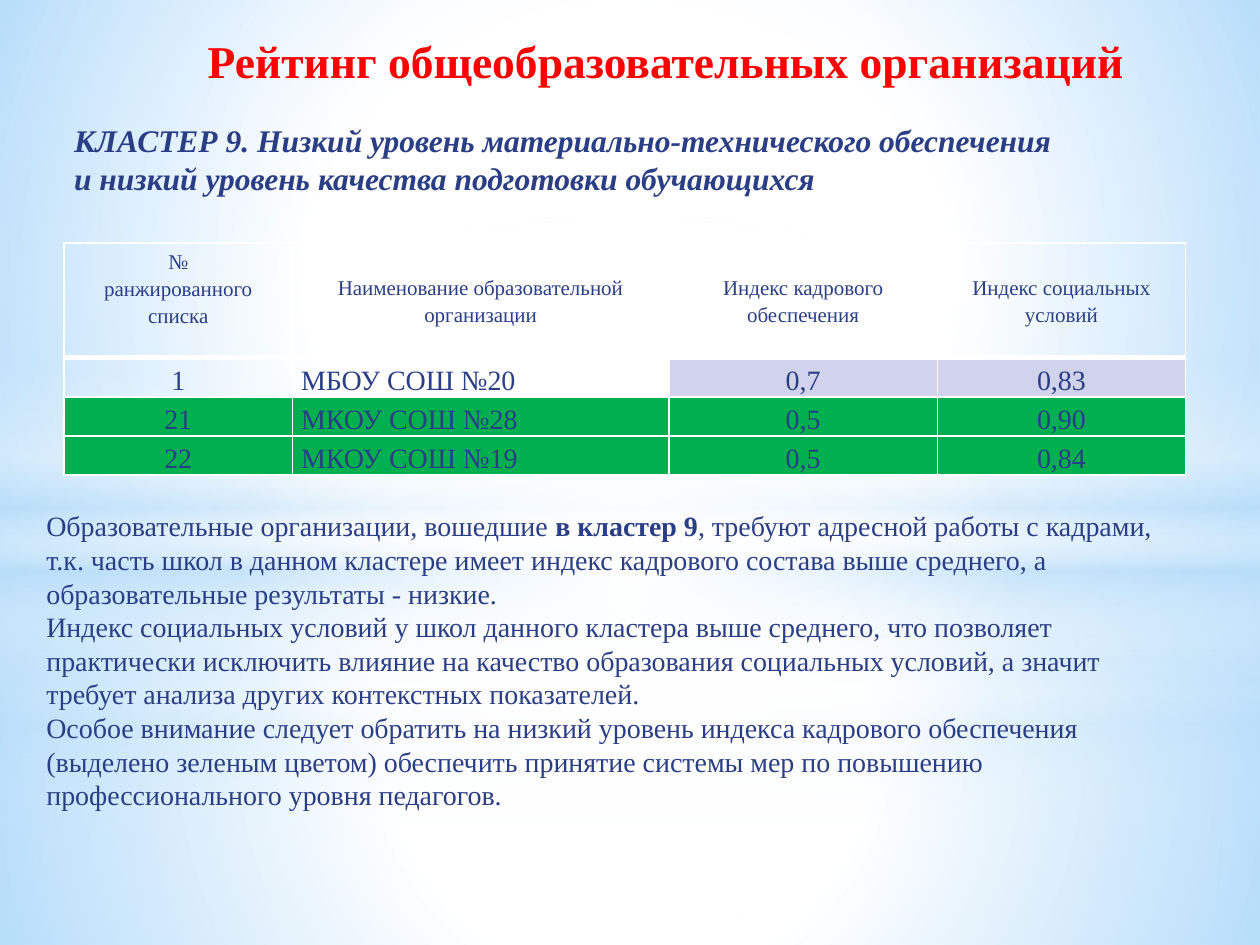
from lxml import etree
from pptx import Presentation
from pptx.dml.color import RGBColor
from pptx.enum.shapes import MSO_SHAPE
from pptx.enum.text import MSO_ANCHOR, PP_ALIGN
from pptx.oxml.ns import qn
from pptx.util import Inches, Pt

RECT, OVAL = MSO_SHAPE.RECTANGLE, MSO_SHAPE.OVAL
TOP, MIDDLE, BOTTOM = MSO_ANCHOR.TOP, MSO_ANCHOR.MIDDLE, MSO_ANCHOR.BOTTOM
LEFT, CENTER = PP_ALIGN.LEFT, PP_ALIGN.CENTER
FONT = "Times New Roman"
COLORS = {
    "white": "FFFFFF",
    "sky": "B4DCFA",
    "red": "FF0000",
    "navy": "2A3E86",
    "lilac": "D0D3EB",
    "green": "00B050",
}
BAND = [(0, "white", 0), (29, "white", 30), (45, "sky", 40),
        (55, "white", 26), (65, "sky", 60), (100, "white", 0)]
HEADERS = [
    ["№", "ранжированного", "списка"],
    ["Наименование образовательной организации"],
    ["Индекс кадрового обеспечения"],
    ["Индекс социальных условий"],
]
SCHOOLS = [
    (["1", "МБОУ СОШ №20", "0,7", "0,83"], [None, None, "lilac", "lilac"]),
    (["21", "МКОУ СОШ №28", "0,5", "0,90"], ["green"] * 4),
    (["22", "МКОУ СОШ №19", "0,5", "0,84"], ["green"] * 4),
]
CONCLUSIONS = [
    [("Образовательные организации, вошедшие ", False),
     ("в кластер 9", True),
     (", требуют адресной работы с кадрами, т.к. часть школ в данном кластере "
      "имеет индекс кадрового состава выше среднего, а образовательные "
      "результаты - низкие.", False)],
    [("Индекс социальных условий у школ данного кластера выше среднего, что "
      "позволяет практически исключить влияние на качество образования "
      "социальных условий, а значит требует анализа других контекстных "
      "показателей.", False)],
    [("Особое внимание следует обратить на низкий уровень индекса кадрового "
      "обеспечения (выделено зеленым цветом) обеспечить принятие системы мер "
      "по повышению профессионального уровня педагогов.", False)],
]


def rgb(name):
    """Return the named colour."""
    return RGBColor.from_string(COLORS[name])


def add_glow(page, kind, top, height, stops, radial=True):
    """Add a full-width shape with a translucent gradient of (place, colour, opacity)."""
    shape = page.shapes.add_shape(kind, 0, Inches(top), Inches(10), Inches(height))
    shape.shadow.inherit = False
    shape.line.fill.background()
    shape.fill.background()
    empty = shape._element.spPr.find(qn("a:noFill"))
    gradient = etree.Element(qn("a:gradFill"), rotWithShape="1")
    stop_list = etree.SubElement(gradient, qn("a:gsLst"))
    for place, color, opacity in stops:
        stop = etree.SubElement(stop_list, qn("a:gs"), pos=str(place * 1000))
        tint = etree.SubElement(stop, qn("a:srgbClr"), val=COLORS[color])
        etree.SubElement(tint, qn("a:alpha"), val=str(opacity * 1000))
    if radial:
        route = etree.SubElement(gradient, qn("a:path"), path="circle")
        etree.SubElement(route, qn("a:fillToRect"), l="50000", t="50000",
                         r="50000", b="50000")
    else:
        etree.SubElement(gradient, qn("a:lin"), ang="5400000", scaled="0")
    empty.getparent().replace(empty, gradient)


def add_backdrop(page, split, band_top, opacity, fade):
    """Add one set of sky glows that meet at the split height."""
    add_glow(page, RECT, split, 7.5 - split,
             [(0, "white", opacity + 2), (37, "white", opacity - 13),
              (100, "sky", opacity - 10)])
    add_glow(page, RECT, 0, split,
             [(0, "white", opacity), (48, "white", opacity - 27),
              (100, "sky", opacity - 10)])
    add_glow(page, RECT, band_top, 2.5, BAND, radial=False)
    add_glow(page, OVAL, 1.75, 5.58, [(0, "white", 100), (fade, "white", 0)])


def add_span(para, text, size, color="navy", bold=False, italic=False):
    """Add one formatted run."""
    span = para.add_run()
    span.text = text
    font = span.font
    font.name, font.size = FONT, Pt(size)
    font.bold, font.italic = bold, italic
    font.color.rgb = rgb(color)


def add_text(page, place, paragraphs, size, anchor=TOP, wrap=True, indent=0, **style):
    """Add a text box from paragraphs of (text, bold) pairs."""
    box = page.shapes.add_textbox(*[Inches(value) for value in place])
    frame = box.text_frame
    frame.word_wrap, frame.vertical_anchor = wrap, anchor
    for index, spans in enumerate(paragraphs):
        para = frame.paragraphs[0] if index == 0 else frame.add_paragraph()
        if indent:
            props = para._p.get_or_add_pPr()
            props.set("marL", "0")
            props.set("indent", str(Inches(indent)))
        for text, bold in spans:
            add_span(para, text, size, bold=bold, **style)


def set_borders(cell, top, bottom):
    """Draw white borders around a cell."""
    props = cell._tc.get_or_add_tcPr()
    for side, width in (("L", 1), ("R", 1), ("T", top), ("B", bottom)):
        line = etree.SubElement(props, qn(f"a:ln{side}"), w=str(Pt(width)))
        fill = etree.SubElement(line, qn("a:solidFill"))
        etree.SubElement(fill, qn("a:srgbClr"), val=COLORS["white"])


def fill_cell(cell, lines, size, align, anchor, color=None, borders=(1, 1)):
    """Write and format one table cell."""
    set_borders(cell, *borders)
    if color:
        cell.fill.solid()
        cell.fill.fore_color.rgb = rgb(color)
    else:
        cell.fill.background()
    cell.margin_left = cell.margin_right = Inches(0.07)
    cell.margin_top = cell.margin_bottom = 0
    cell.vertical_anchor = anchor
    frame = cell.text_frame
    for index, text in enumerate(lines):
        para = frame.paragraphs[0] if index == 0 else frame.add_paragraph()
        para.alignment, para.line_spacing = align, 1.15
        add_span(para, text, size)


def add_rating(page):
    """Add the table of rated schools."""
    table = page.shapes.add_table(4, 4, Inches(0.51), Inches(1.93),
                                  Inches(8.9), Inches(1.84)).table
    table.horz_banding = False
    for column, width in zip(table.columns, (1.81, 2.99, 2.13, 1.97)):
        column.width = Inches(width)
    for row, height in zip(table.rows, (0.91, 0.31, 0.31, 0.31)):
        row.height = Inches(height)
    for column, lines in enumerate(HEADERS):
        fill_cell(table.cell(0, column), lines, 12, CENTER, MIDDLE, borders=(1, 3))
    table.cell(0, 0).margin_bottom = Inches(0.2)
    for row, (texts, colors) in enumerate(SCHOOLS, 1):
        borders = (3, 1) if row == 1 else (1, 1)
        for column, (text, color) in enumerate(zip(texts, colors)):
            align = LEFT if column == 1 else CENTER
            fill_cell(table.cell(row, column), [text], 16, align, BOTTOM, color, borders)


def main():
    """Build the slide and save the deck."""
    deck = Presentation()
    deck.slide_width, deck.slide_height = Inches(10), Inches(7.5)
    page = deck.slides.add_slide(deck.slide_layouts[6])
    add_backdrop(page, 5.58, 4.12, 89, 56)
    add_backdrop(page, 4.23, 2.9, 90, 54)
    add_text(page, (1.06, 0.21, 8.04, 0.54),
             [[("Рейтинг общеобразовательных организаций", True)]],
             26, MIDDLE, wrap=False, indent=0.49, color="red")
    add_text(page, (0.27, 3.99, 9.14, 2.52), CONCLUSIONS, 16)
    add_text(page, (0, 0.91, 9.64, 1.01),
             [[("КЛАСТЕР 9. Низкий уровень материально-технического обеспечения", True)],
              [("и низкий уровень качества подготовки обучающихся", True)]],
             18, indent=0.49, italic=True)
    add_rating(page)
    deck.save("out.pptx")


if __name__ == "__main__":
    main()
